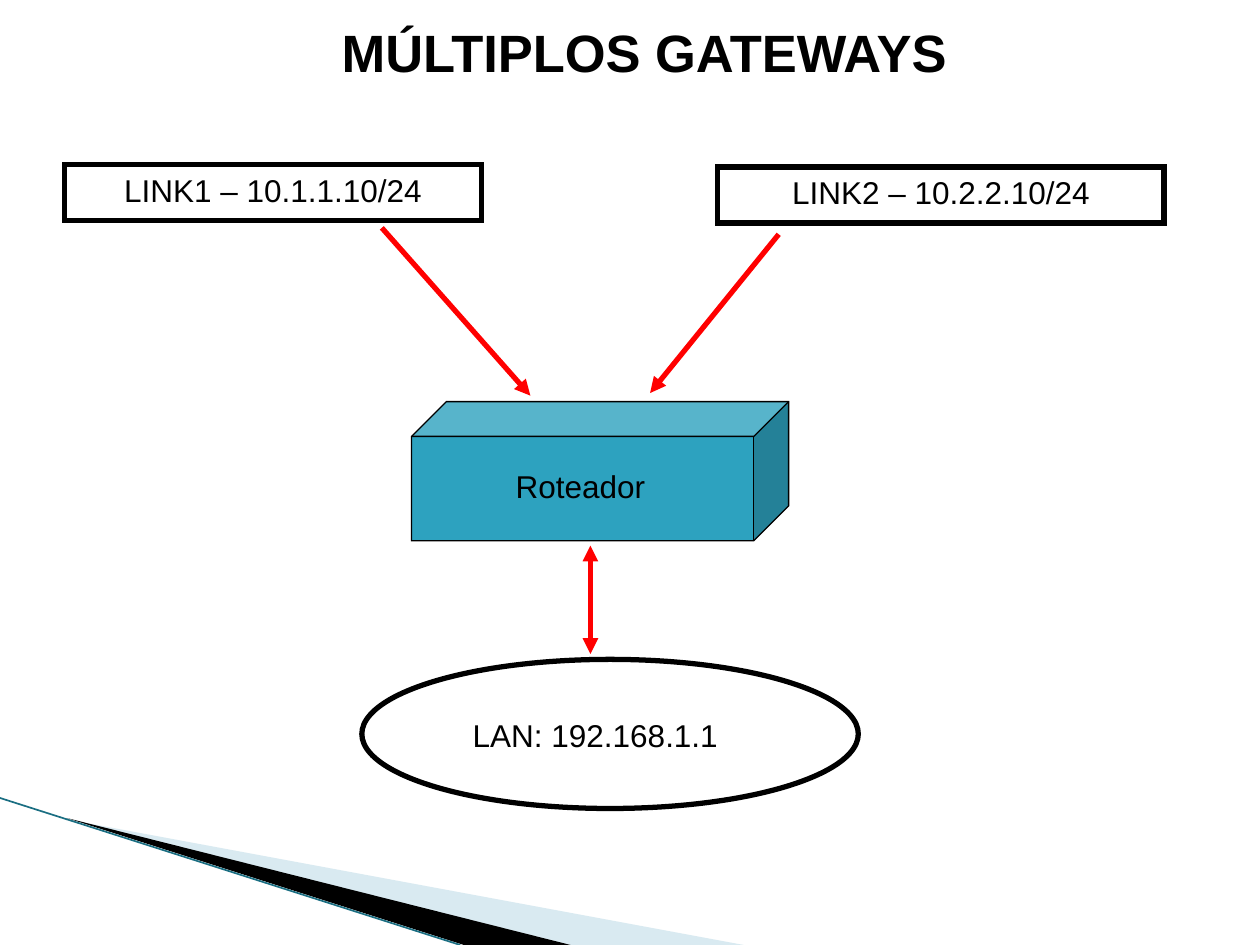
from lxml import etree
from pptx import Presentation
from pptx.dml.color import RGBColor
from pptx.enum import shapes, text
from pptx.oxml.ns import qn
from pptx.util import Pt

THEME = {
    "font": "Arial", "title": 30, "label": 18,
    "ink": "000000", "arrow": "FF0000", "router": "2DA2BF",
    "wedge": "A0CBDC", "edge": "1A6E82",
    "thick": 3, "thin": 0.75, "edge_width": 0.95,
}

# Lengths are points; frames are left, top, width, height.
TITLE = ("MÚLTIPLOS GATEWAYS", (31, 8, 674.5, 43))
LINKS = [
    ("LINK1 – 10.1.1.10/24", (36.9, 94.2, 238.2, 32)),
    ("LINK2 – 10.2.2.10/24", (410.2, 95.5, 255, 32)),
]
ROUTER = (235.2, 229.5, 215.5, 79.5)
LAN = (206.8, 376.8, 283.7, 85.2)
LABELS = [
    ("Roteador", (257.8, 263.5, 147.6, 29)),
    ("LAN: 192.168.1.1", (229.7, 405.4, 221, 29)),
]
ARROWS = [  # start, end, ends that carry a head
    ((218.2, 130.2), (303.1, 226.1), ["tailEnd"]),
    ((445, 133.9), (371.5, 224.6), ["tailEnd"]),
    ((337.4, 311.8), (337.4, 373.7), ["headEnd", "tailEnd"]),
]
WEDGES = [  # corners, colour, opacity in percent
    ([(39.6, 468.5), (425, 540), (326, 540)], THEME["wedge"], 40),
    ([(38.2, 467.5), (326, 540), (265, 540)], THEME["ink"], 100),
]
EDGE = ((0, 456), (263, 540))


def pts(values):
    return [Pt(value) for value in values]


def rgb(code):
    return RGBColor.from_string(code)


def write(box, words, size=THEME["label"], bold=False,
          anchor=text.MSO_ANCHOR.TOP):
    """Put one centred line of text in a shape."""
    frame = box.text_frame
    frame.word_wrap = True
    frame.auto_size = text.MSO_AUTO_SIZE.NONE
    frame.vertical_anchor = anchor
    para = frame.paragraphs[0]
    para.alignment = text.PP_ALIGN.CENTER
    para.space_before = Pt(0)
    span = para.add_run()
    span.text = words
    span.font.name = THEME["font"]
    span.font.size = Pt(size)
    span.font.bold = bold
    span.font.color.rgb = rgb(THEME["ink"])


def add_outline(page, kind, frame, width=THEME["thick"], fill=None):
    shape = page.shapes.add_shape(kind, *pts(frame))
    shape.shadow.inherit = False
    if fill:
        shape.fill.solid()
        shape.fill.fore_color.rgb = rgb(fill)
    else:
        shape.fill.background()
    shape.line.color.rgb = rgb(THEME["ink"])
    shape.line.width = Pt(width)
    etree.SubElement(shape.line._get_or_add_ln(), qn("a:miter"), lim="800000")
    return shape


def add_line(page, start, end, color, width, heads=()):
    line = page.shapes.add_connector(
        shapes.MSO_CONNECTOR.STRAIGHT, *pts(start + end))
    line.line.color.rgb = rgb(color)
    line.line.width = Pt(width)
    outline = line.line._get_or_add_ln()
    for head in heads:
        etree.SubElement(outline, qn(f"a:{head}"), type="triangle")
    etree.SubElement(line._element.spPr, qn("a:effectLst"))


def add_wedge(page, corners, color, opacity):
    first, *rest = [tuple(pts(corner)) for corner in corners]
    builder = page.shapes.build_freeform(*first)
    builder.add_line_segments(rest, close=True)
    wedge = builder.convert_to_shape()
    wedge.shadow.inherit = False
    wedge.fill.solid()
    wedge.fill.fore_color.rgb = rgb(color)
    wedge.line.fill.background()
    if opacity < 100:
        tint = wedge._element.spPr.find(f"{qn('a:solidFill')}/{qn('a:srgbClr')}")
        etree.SubElement(tint, qn("a:alpha"), val=str(opacity * 1000))


def main():
    deck = Presentation()
    deck.slide_width, deck.slide_height = Pt(720), Pt(540)
    page = deck.slides.add_slide(deck.slide_layouts.get_by_name("Title Only"))

    for wedge in WEDGES:
        add_wedge(page, *wedge)
    add_line(page, *EDGE, THEME["edge"], THEME["edge_width"])

    words, frame = TITLE
    title = page.shapes.title
    title.left, title.top, title.width, title.height = pts(frame)
    write(title, words, size=THEME["title"], bold=True,
          anchor=text.MSO_ANCHOR.MIDDLE)

    for words, frame in LINKS:
        write(add_outline(page, shapes.MSO_SHAPE.RECTANGLE, frame), words)
    add_outline(page, shapes.MSO_SHAPE.CUBE, ROUTER,
                width=THEME["thin"], fill=THEME["router"])
    add_outline(page, shapes.MSO_SHAPE.OVAL, LAN)
    for words, frame in LABELS:
        write(page.shapes.add_textbox(*pts(frame)), words)
    for start, end, heads in ARROWS:
        add_line(page, start, end, THEME["arrow"], THEME["thick"], heads)

    deck.save("out.pptx")


if __name__ == "__main__":
    main()
